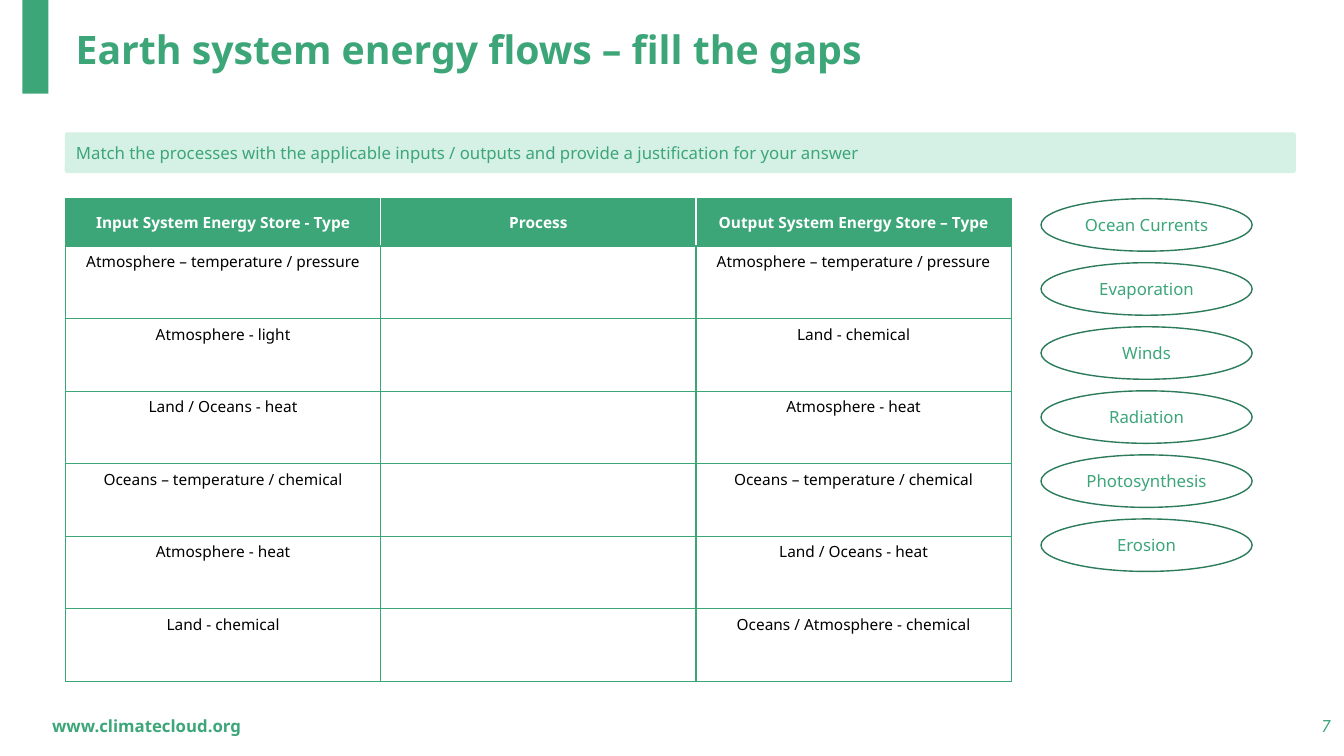
"""Build the Earth system energy flows gap-fill slide."""
from dataclasses import dataclass

from lxml.etree import SubElement
from pptx import Presentation
from pptx.dml.color import RGBColor
from pptx.enum.shapes import MSO_SHAPE
from pptx.enum.text import MSO_ANCHOR, PP_ALIGN
from pptx.oxml.ns import qn
from pptx.util import Pt

TITLE = "Earth system energy flows – fill the gaps"
TASK = ("Match the processes with the applicable inputs / outputs "
        "and provide a justification for your answer")
WEBSITE = "www.climatecloud.org"
PAGE = "7"
HEADINGS = ("Input System Energy Store - Type", "Process", "Output System Energy Store – Type")
FLOWS = [
    ("Atmosphere – temperature / pressure", "", "Atmosphere – temperature / pressure"),
    ("Atmosphere - light", "", "Land - chemical"),
    ("Land / Oceans - heat", "", "Atmosphere - heat"),
    ("Oceans – temperature / chemical", "", "Oceans – temperature / chemical"),
    ("Atmosphere - heat", "", "Land / Oceans - heat"),
    ("Land - chemical", "", "Oceans / Atmosphere - chemical"),
]
PROCESSES = ["Ocean Currents", "Evaporation", "Winds", "Radiation", "Photosynthesis", "Erosion"]


@dataclass(frozen=True)
class Theme:
    """Colours, font and type sizes."""
    green: str = "3CA679"
    dark: str = "2C7B5A"
    pale: str = "D5F0E5"
    white: str = "FFFFFF"
    black: str = "000000"
    font: str = "Noto Sans"
    title: int = 28
    body: int = 12
    cell: int = 11


THEME = Theme()
LEFT, CONTENT_TOP = 46.8, 141.9
COLUMN_W, HEADING_H, FLOW_H = 225.2, 33.9, 51.8
OVAL_LEFT, OVAL_W, OVAL_H, OVAL_STEP = 743.6, 150.8, 37.5, 45.75


def write(holder, wording, size, color, align=PP_ALIGN.LEFT, bold=False, italic=False,
          anchor=MSO_ANCHOR.MIDDLE):
    """Set one formatted paragraph in a shape or cell."""
    holder.text_frame.text = wording
    holder.text_frame.word_wrap = True
    holder.vertical_anchor = holder.text_frame.vertical_anchor = anchor
    paragraph = holder.text_frame.paragraphs[0]
    paragraph.alignment = align
    font = paragraph.font if not paragraph.runs else paragraph.runs[0].font
    font.name, font.size, font.bold, font.italic = THEME.font, Pt(size), bold, italic
    font.color.rgb = RGBColor.from_string(color)
    return paragraph


def add_shape(slide, kind, box, fill=None, line=None):
    """Add a flat preset shape."""
    shape = slide.shapes.add_shape(kind, *map(Pt, box))
    shape.shadow.inherit = False
    if fill:
        shape.fill.solid()
        shape.fill.fore_color.rgb = RGBColor.from_string(fill)
    else:
        shape.fill.background()
    if line:
        shape.line.color.rgb = RGBColor.from_string(line)
        shape.line.width = Pt(1)
    else:
        shape.line.fill.background()
    return shape


def add_borders(cell, left, right):
    """Draw the four cell borders, green above and below."""
    properties = cell._tc.get_or_add_tcPr()
    sides = (("a:lnL", left), ("a:lnR", right), ("a:lnT", THEME.green), ("a:lnB", THEME.green))
    for position, (side, color) in enumerate(sides):
        border = SubElement(properties, qn(side), w=str(Pt(1)))
        SubElement(SubElement(border, qn("a:solidFill")), qn("a:srgbClr"), val=color)
        properties.insert(position, border)


def add_flow_table(slide):
    """Add the table of energy stores and missing processes."""
    rows = [HEADINGS, *FLOWS]
    columns = len(HEADINGS)
    table = slide.shapes.add_table(
        len(rows), columns, Pt(LEFT), Pt(CONTENT_TOP), Pt(COLUMN_W * columns),
        Pt(HEADING_H + FLOW_H * len(FLOWS))).table
    table.horz_banding = False
    for column in table.columns:
        column.width = Pt(COLUMN_W)
    for r, row in enumerate(rows):
        heading = r == 0
        table.rows[r].height = Pt(HEADING_H if heading else FLOW_H)
        for c, wording in enumerate(row):
            cell = table.cell(r, c)
            write(cell, wording, THEME.cell, THEME.white if heading else THEME.black,
                  PP_ALIGN.CENTER, bold=heading,
                  anchor=MSO_ANCHOR.MIDDLE if heading else MSO_ANCHOR.TOP)
            if heading:
                cell.fill.solid()
                cell.fill.fore_color.rgb = RGBColor.from_string(THEME.green)
            else:
                cell.fill.background()
            inner = THEME.white if heading else THEME.green
            add_borders(cell, inner if c else THEME.green,
                        inner if c < columns - 1 else THEME.green)


def main():
    """Compose and save the slide."""
    deck = Presentation()
    deck.slide_width, deck.slide_height = Pt(960), Pt(540)
    slide = deck.slides.add_slide(deck.slide_layouts[5])

    add_shape(slide, MSO_SHAPE.RECTANGLE, (16, 0, 18.7, 67), THEME.green)
    title = slide.shapes.title
    title.left, title.top, title.width, title.height = map(Pt, (LEFT, 9.4, 772.6, 54.7))
    write(title, TITLE, THEME.title, THEME.green, bold=True).line_spacing = 0.9

    task = add_shape(slide, MSO_SHAPE.ROUNDED_RECTANGLE, (LEFT, 95, 878.4, 28.1),
                     THEME.pale, THEME.pale)
    task.adjustments[0] = 0.05
    write(task, TASK, THEME.body, THEME.green)

    add_flow_table(slide)
    for i, process in enumerate(PROCESSES):
        oval = add_shape(slide, MSO_SHAPE.OVAL,
                         (OVAL_LEFT, CONTENT_TOP + i * OVAL_STEP, OVAL_W, OVAL_H),
                         line=THEME.dark)
        write(oval, process, THEME.body, THEME.green, PP_ALIGN.CENTER)

    website = slide.shapes.add_textbox(Pt(30.2), Pt(504), Pt(324), Pt(28.8))
    write(website, WEBSITE, THEME.body, THEME.green, bold=True)
    page = slide.shapes.add_textbox(Pt(734.4), Pt(504), Pt(223.2), Pt(28.8))
    write(page, PAGE, THEME.body, THEME.green, PP_ALIGN.RIGHT, italic=True)
    deck.save("out.pptx")


if __name__ == "__main__":
    main()
